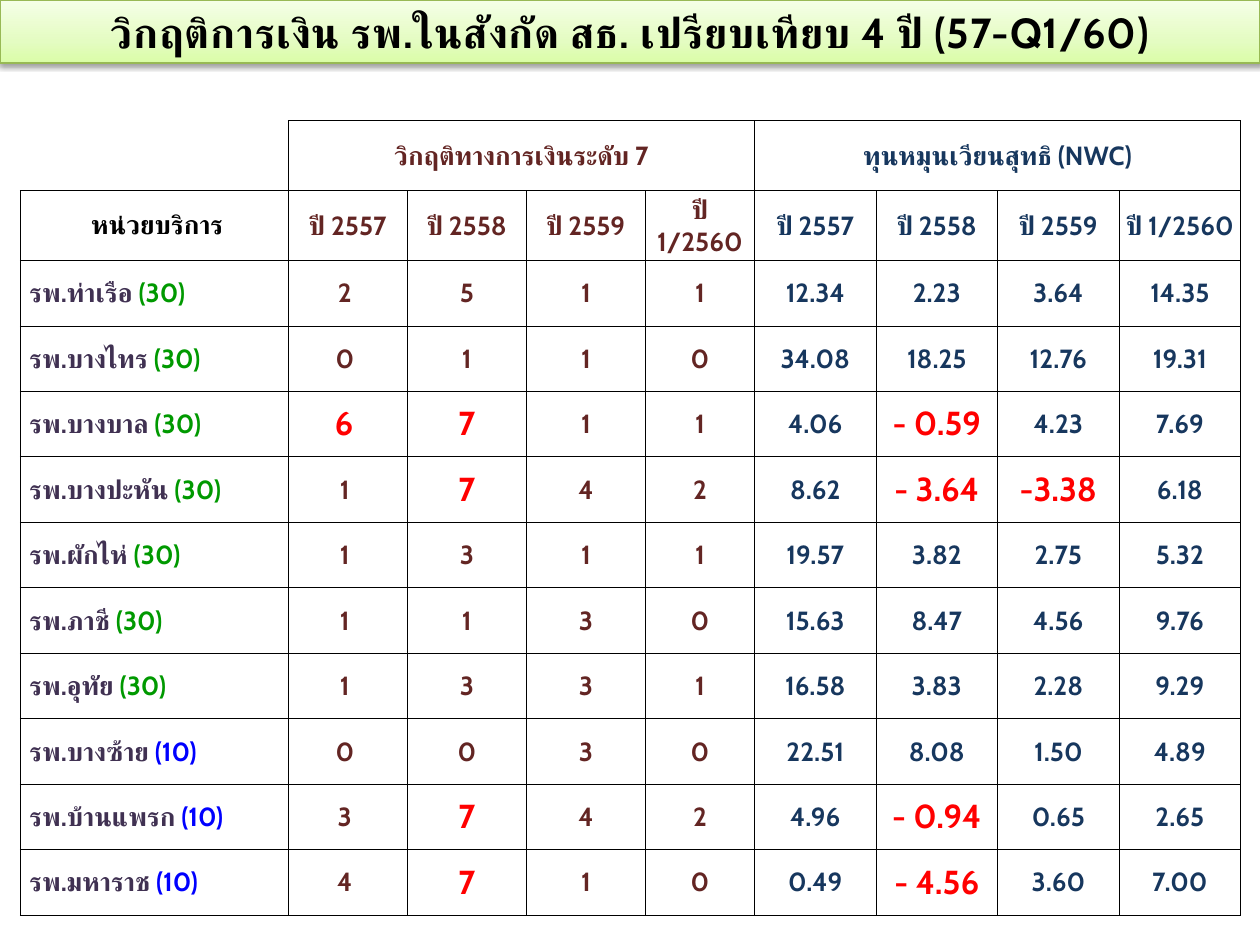
from copy import deepcopy

from lxml.etree import SubElement
from pptx import Presentation
from pptx.dml.color import RGBColor
from pptx.enum.shapes import MSO_SHAPE
from pptx.enum.text import MSO_ANCHOR, MSO_AUTO_SIZE, PP_ALIGN
from pptx.oxml import parse_xml
from pptx.oxml.ns import nsdecls, qn
from pptx.util import Cm, Pt

BLACK = RGBColor(0x00, 0x00, 0x00)
MAROON = RGBColor(0x63, 0x25, 0x23)
NAVY = RGBColor(0x17, 0x37, 0x5E)
PURPLE = RGBColor(0x40, 0x31, 0x52)
GREEN = RGBColor(0x00, 0x99, 0x00)
BLUE = RGBColor(0x00, 0x00, 0xFF)
RED = RGBColor(0xFF, 0x00, 0x00)
OLIVE = RGBColor(0x98, 0xB9, 0x55)
GRADIENT = [
    (0, RGBColor(0xDA, 0xFD, 0xA7)),
    (0.35, RGBColor(0xE4, 0xFC, 0xC2)),
    (1, RGBColor(0xF5, 0xFF, 0xE7)),
]
FONT = "Cabin"
NO_STYLE = "{2D5ABB26-0587-4C30-8999-92F81FD0307C}"

TITLE = "วิกฤติการเงิน รพ.ในสังกัด สธ. เปรียบเทียบ 4 ปี (57-Q1/60)"
GROUPS = [(1, "วิกฤติทางการเงินระดับ 7", MAROON), (5, "ทุนหมุนเวียนสุทธิ (NWC)", NAVY)]
UNIT_HEADER = " หน่วยบริการ"
YEARS = ["ปี 2557", "ปี 2558", "ปี 2559", "ปี 1/2560"]
HOSPITALS = [
    ("รพ.ท่าเรือ ", "(30)", ["2 ", "5", "1", "1", "12.34", "2.23", "3.64", "14.35"]),
    ("รพ.บางไทร ", "(30)", ["0 ", "1", "1", "0", "34.08", "18.25", "12.76", "19.31"]),
    ("รพ.บางบาล ", "(30)", ["6 ", "7", "1", "1", "4.06", "- 0.59", "4.23", "7.69"]),
    ("รพ.บางปะหัน ", "(30)", ["1 ", "7", "4", "2", "8.62", "- 3.64", "-3.38", "6.18"]),
    ("รพ.ผักไห่ ", "(30)", ["1 ", "3", "1", "1", "19.57", "3.82", "2.75", "5.32"]),
    ("รพ.ภาชี ", "(30)", ["1 ", "1", "3", "0", "15.63", "8.47", "4.56", "9.76"]),
    ("รพ.อุทัย ", "(30)", ["1 ", "3", "3", "1", "16.58", "3.83", "2.28", "9.29"]),
    ("รพ.บางซ้าย ", "(10)", ["0 ", "0", "3", "0", "22.51", "8.08", "1.50", "4.89"]),
    ("รพ.บ้านแพรก ", "(10)", ["3 ", "7", "4", "2", "4.96", "- 0.94", "0.65", "2.65"]),
    ("รพ.มหาราช ", "(10)", ["4 ", "7", "1", "0", "0.49", "- 4.56", "3.60", "7.00"]),
]
SIZE_COLORS = {"(30)": GREEN, "(10)": BLUE}
COL_WIDTHS = [5.4] + [2.4] * 3 + [2.2] + [2.45] * 4
ROW_HEIGHTS = [1.41] * 2 + [1.32] * len(HOSPITALS)
HEAD_INSETS = (0.03, 0.03, 0.03, 0)
UNIT_INSETS = (0.25, 0.18, 0.25, 0.18)
BODY_INSETS = (0.18, 0, 0.18, 0)


def add_run(p, text, size, color):
    r = p.add_run()
    r.text = text
    fmt = {"size": Pt(size), "bold": True, "name": FONT}
    for name, value in fmt.items():
        setattr(r.font, name, value)
    r.font.color.rgb = color
    SubElement(r.font._element, qn("a:cs"), typeface=FONT)
    return r


def fill_cell(cell, runs, insets, align=PP_ALIGN.CENTER):
    sides = ("margin_left", "margin_top", "margin_right", "margin_bottom")
    for side, value in zip(sides, insets):
        setattr(cell, side, Cm(value))
    cell.vertical_anchor = MSO_ANCHOR.MIDDLE
    p = cell.text_frame.paragraphs[0]
    p.alignment = align
    for run in runs:
        add_run(p, *run)


def set_borders(cell, sides):
    tcPr = cell._tc.get_or_add_tcPr()
    for i, side in enumerate(sides):
        tcPr.insert(i, parse_xml(
            f'<a:ln{side} {nsdecls("a")} w="6350"><a:solidFill>'
            f'<a:srgbClr val="{BLACK}"/></a:solidFill></a:ln{side}>'))


def add_title(slide, width):
    sp = slide.shapes.add_shape(MSO_SHAPE.RECTANGLE, 0, 0, width, Cm(1.27))
    sp.fill.gradient()
    sp.fill.gradient_angle = 90
    stops = sp._element.spPr.find(".//" + qn("a:gsLst"))
    stops.append(deepcopy(stops[-1]))
    for stop, (position, color) in zip(sp.fill.gradient_stops, GRADIENT):
        stop.position = position
        stop.color.rgb = color
    sp.line.color.rgb = OLIVE
    sp.line.width = Pt(0.75)
    sp.shadow.inherit = False
    sp._element.spPr.find(qn("a:effectLst")).append(parse_xml(
        f'<a:outerShdw {nsdecls("a")} blurRad="{Pt(3.1)}" dist="{Pt(1.6)}" '
        f'dir="5400000" rotWithShape="0"><a:srgbClr val="{BLACK}">'
        '<a:alpha val="38000"/></a:srgbClr></a:outerShdw>'))
    tf = sp.text_frame
    tf.word_wrap = True
    tf.auto_size = MSO_AUTO_SIZE.SHAPE_TO_FIT_TEXT
    p = tf.paragraphs[0]
    p.alignment = PP_ALIGN.CENTER
    r = add_run(p, TITLE, 24, BLACK)
    r.font._element.set("spc", "50")


def add_finance_table(slide):
    frame = slide.shapes.add_table(
        len(ROW_HEIGHTS), len(COL_WIDTHS), Cm(0.41), Cm(2.43),
        Cm(sum(COL_WIDTHS)), Cm(sum(ROW_HEIGHTS)))
    table = frame.table
    table.first_row = table.horz_banding = False
    table._tbl.tblPr.find(qn("a:tableStyleId")).text = NO_STYLE
    for col, width in zip(table.columns, COL_WIDTHS):
        col.width = Cm(width)
    for row, height in zip(table.rows, ROW_HEIGHTS):
        row.height = Cm(height)
    for cell in table.iter_cells():
        cell.fill.background()
        set_borders(cell, "RB" if cell is None or cell._tc is table.cell(0, 0)._tc else "LRTB")

    fill_cell(table.cell(1, 0), [(UNIT_HEADER, 15, BLACK)], UNIT_INSETS)
    for start, heading, color in GROUPS:
        table.cell(0, start).merge(table.cell(0, start + len(YEARS) - 1))
        fill_cell(table.cell(0, start), [(heading, 15, color)], HEAD_INSETS)
        for c, year in enumerate(YEARS, start):
            fill_cell(table.cell(1, c), [(year, 15, color)], HEAD_INSETS)

    for r, (name, size, values) in enumerate(HOSPITALS, 2):
        runs = [(name, 15, PURPLE), (size, 15, SIZE_COLORS[size])]
        fill_cell(table.cell(r, 0), runs, BODY_INSETS, PP_ALIGN.LEFT)
        for c, value in enumerate(values, 1):
            is_level = c <= len(YEARS)
            critical = int(value) >= 6 if is_level else value.startswith("-")
            color = MAROON if is_level else NAVY
            run = (value, 19, RED) if critical else (value, 15, color)
            fill_cell(table.cell(r, c), [run], BODY_INSETS)


def main():
    prs = Presentation()
    prs.slide_width, prs.slide_height = Cm(25.4), Cm(19.05)
    s = prs.slides.add_slide(prs.slide_layouts[6])
    add_title(s, prs.slide_width)
    add_finance_table(s)
    prs.save("out.pptx")


if __name__ == "__main__":
    main()
